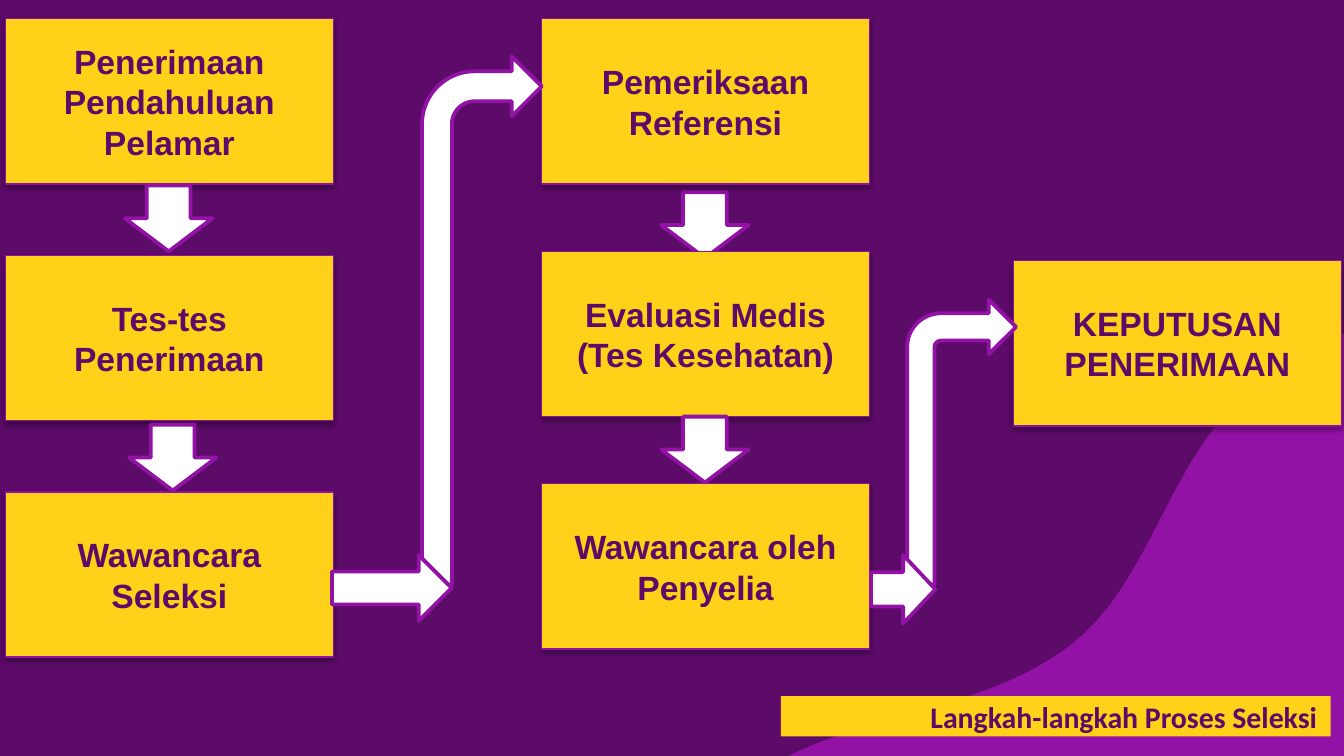
from lxml import etree
from pptx import Presentation, util as u
from pptx.dml.color import RGBColor
from pptx.enum import shapes, text
from pptx.oxml.ns import qn

# Content
TITLE = "Langkah-langkah Proses Seleksi"
COLUMNS = [  # left, top, pitch, steps
    (0.04, 0.14, 1.76, ["Penerimaan Pendahuluan Pelamar", "Tes-tes Penerimaan",
                        "Wawancara Seleksi"]),
    (4.03, 0.14, 1.73, ["Pemeriksaan Referensi", "Evaluasi Medis (Tes Kesehatan)",
                        "Wawancara oleh Penyelia"]),
    (7.54, 1.94, 0, ["KEPUTUSAN PENERIMAAN"]),
]
ARROW_BEHIND = (5.0, 1.35)
DOWN_ARROWS = [(1.01, 1.3), (1.04, 3.08), (5.0, 3.02)]
TURNS = [  # bent arrow, its bend radius, then the arrow feeding into it
    ((3.14, 0.42, 0.89, 3.93), 0.44, (2.47, 4.13, 0.89, 0.49)),
    ((6.75, 2.23, 0.81, 2.12), 0.31, (6.48, 4.13, 0.48, 0.51)),
]
WAVE_START = (10.14, 2.44)
WAVE_EDGE = [(10.14, 5.88), (5.49, 5.88)]
WAVE_CURVES = [
    ((5.58, 5.81), (5.67, 5.74), (5.77, 5.68)),
    ((6.13, 5.47), (6.54, 5.38), (6.94, 5.26)),
    ((7.34, 5.15), (7.75, 5.0), (8.06, 4.72)),
    ((8.5, 4.31), (8.66, 3.67), (9.03, 3.19)),
    ((9.31, 2.82), (9.7, 2.56), (10.14, 2.44)),
]

# Style
COLORS = {"ground": "5C0B68", "wave": "9312A6", "box": "FFD119",
          "edge": "920EA6", "arrow": "FFFFFF", "shadow": "000000"}
WIDTH = u.Inches(10)
HEIGHT = WIDTH * 9 // 16
BOX_W, BOX_H = 2.44, 1.23
DOWN_SIZE = (0.49, 0.65)
CURVE_STEPS = 12
KIND = shapes.MSO_SHAPE

prs = Presentation()
prs.slide_width, prs.slide_height = WIDTH, HEIGHT
slide = prs.slides.add_slide(prs.slide_layouts[6])


def color(name):
    return RGBColor.from_string(COLORS[name])


def paint(part, fill, line=None, width=0):
    part.shadow.inherit = False
    part.fill.solid()
    part.fill.fore_color.rgb = color(fill)
    if line:
        part.line.color.rgb = color(line)
        part.line.width = u.Pt(width)
    else:
        part.line.fill.background()


def add_part(kind, frame, fill, line=None, width=0):
    part = slide.shapes.add_shape(kind, *map(u.Inches, frame))
    paint(part, fill, line, width)
    return part


def write(part, words, size, font, align):
    frame = part.text_frame
    frame.text = words
    frame.word_wrap = True
    frame.vertical_anchor = text.MSO_ANCHOR.MIDDLE
    paragraph = frame.paragraphs[0]
    paragraph.alignment = align
    style = paragraph.runs[0].font
    style.size, style.name, style.bold = u.Pt(size), font, True
    style.color.rgb = color("ground")


def drop_shadow(part):
    effects = part._element.spPr.find(qn("a:effectLst"))
    shadow = etree.SubElement(effects, qn("a:outerShdw"), blurRad=str(u.Pt(3.1)),
                              dist=str(u.Pt(1.8)), dir="5400000", rotWithShape="0")
    tint = etree.SubElement(shadow, qn("a:srgbClr"), val=COLORS["shadow"])
    etree.SubElement(tint, qn("a:alpha"), val="35000")


def curve_points(start, curves):
    for a, b, end in curves:
        for step in range(1, CURVE_STEPS + 1):
            t = step / CURVE_STEPS
            s = 1 - t
            yield tuple(s**3 * p + 3 * s * s * t * q + 3 * s * t * t * r + t**3 * e
                        for p, q, r, e in zip(start, a, b, end))
        start = end


def in_emu(point):
    return tuple(u.Inches(length) for length in point)


def add_arrow(frame, rotation=0):
    arrow = add_part(KIND.RIGHT_ARROW, frame, "arrow", "wave", 2)
    arrow.rotation = rotation


# Background and wave
slide.background.fill.solid()
slide.background.fill.fore_color.rgb = color("ground")
outline = slide.shapes.build_freeform(*in_emu(WAVE_START))
wave_points = WAVE_EDGE + list(curve_points(WAVE_EDGE[-1], WAVE_CURVES))
outline.add_line_segments([in_emu(point) for point in wave_points])
paint(outline.convert_to_shape(), "wave")

# Title bar
title = add_part(KIND.RECTANGLE, (5.81, 5.18, 4.09, 0.3), "box")
write(title, TITLE, 16, "Calibri", text.PP_ALIGN.RIGHT)
title.text_frame.margin_top = title.text_frame.margin_bottom = u.Inches(0.1)

# Steps, column by column
add_arrow(ARROW_BEHIND + DOWN_SIZE, 90)
for left, top, pitch, steps in COLUMNS:
    for row, step in enumerate(steps):
        box = add_part(KIND.RECTANGLE, (left, top + row * pitch, BOX_W, BOX_H),
                       "box", "edge", 0.75)
        drop_shadow(box)
        write(box, step, 18, "Arial", text.PP_ALIGN.CENTER)

# Arrows between steps and between columns
for place in DOWN_ARROWS:
    add_arrow(place + DOWN_SIZE, 90)
for bent_frame, bend, feed_frame in TURNS:
    bent = add_part(KIND.BENT_ARROW, bent_frame, "arrow", "wave", 2)
    bent.adjustments[3] = bend
    add_arrow(feed_frame)

prs.save("out.pptx")
